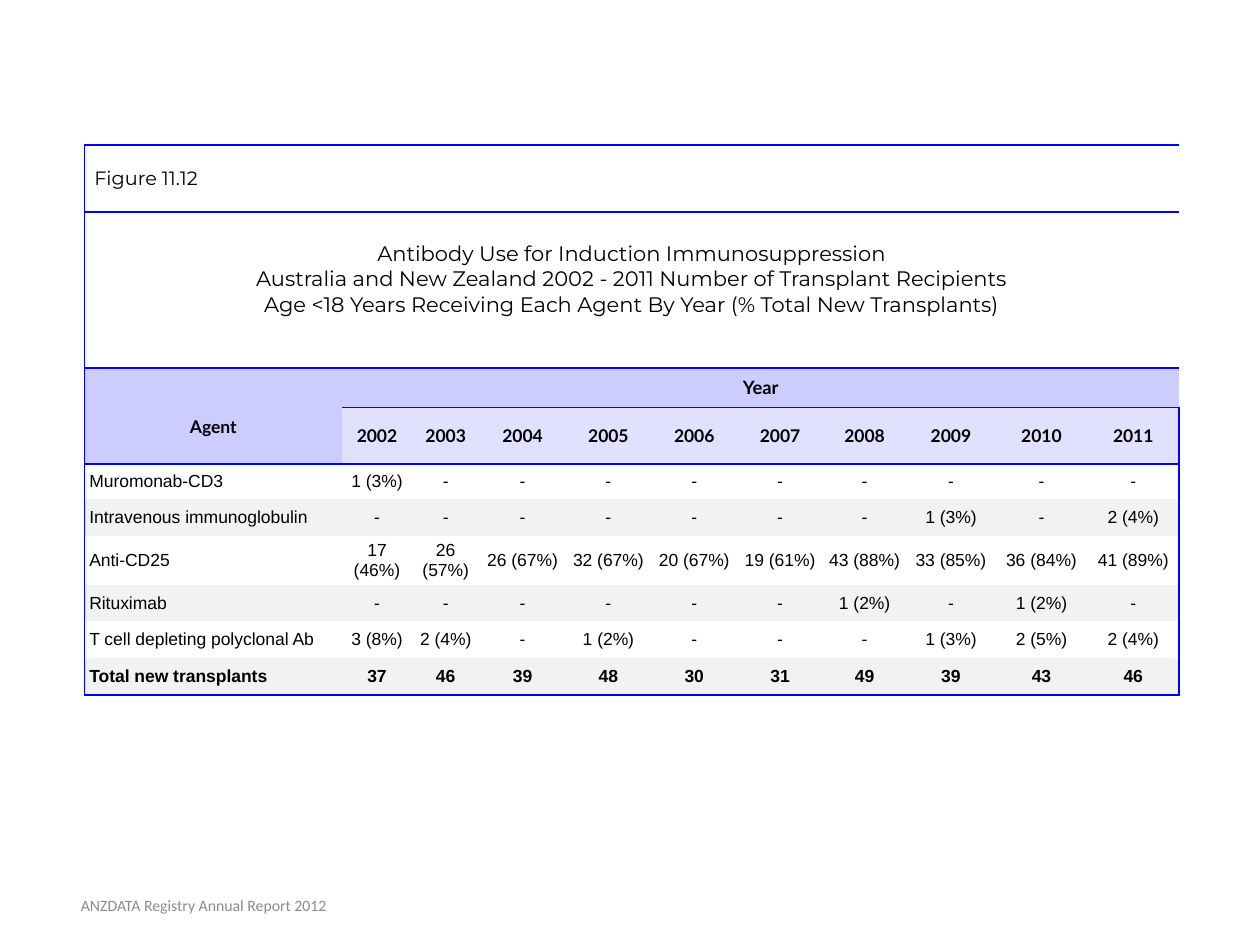
from dataclasses import dataclass

from lxml import etree
from pptx import Presentation
from pptx.dml.color import RGBColor
from pptx.enum.text import MSO_ANCHOR, PP_ALIGN
from pptx.oxml.ns import qn
from pptx.util import Cm, Pt


@dataclass(frozen=True)
class Theme:
    rule: str = "0000FF"
    text: str = "000000"
    footer: str = "8C8C8C"
    header: str = "CCCCFF"
    years: str = "E1E1FF"
    band: str = "F2F2F2"
    title_font: str = "Montserrat"
    header_font: str = "Lato"
    body_font: str = "Arial"
    footer_font: str = "Calibri"
    figure_size: float = 11
    title_size: float = 12
    year_size: float = 10.5
    body_size: float = 10
    footer_size: float = 9


THEME = Theme()
FIGURE = "Figure 11.12"
TITLE = """Antibody Use for Induction Immunosuppression
Australia and New Zealand 2002 - 2011 Number of Transplant Recipients
Age <18 Years Receiving Each Agent By Year (% Total New Transplants)"""
YEARS = [str(year) for year in range(2002, 2012)]
AGENTS = [
    ("Muromonab-CD3", ["1 (3%)"] + ["-"] * 9),
    ("Intravenous immunoglobulin", ["-"] * 7 + ["1 (3%)", "-", "2 (4%)"]),
    ("Anti-CD25", ["17 (46%)", "26 (57%)", "26 (67%)", "32 (67%)", "20 (67%)",
                   "19 (61%)", "43 (88%)", "33 (85%)", "36 (84%)", "41 (89%)"]),
    ("Rituximab", ["-"] * 6 + ["1 (2%)", "-", "1 (2%)", "-"]),
    ("T cell depleting polyclonal Ab", ["3 (8%)", "2 (4%)", "-", "1 (2%)", "-",
                                        "-", "-", "1 (3%)", "2 (5%)", "2 (4%)"]),
    ("Total new transplants", ["37", "46", "39", "48", "30",
                               "31", "49", "39", "43", "46"]),
]
COLUMN_WIDTHS = [5.2, 1.4, 1.37] + [1.73] * 4 + [1.68, 1.8, 1.85, 1.85]
ROW_HEIGHTS = [1.35, 3.15, 0.79, 1.14, 0.71] + [0.74] * 5
FIRST_AGENT_ROW = 4
RULED_ROWS = {0, 1, 2, 3, 4, len(ROW_HEIGHTS)}  # boundaries that carry a line


def style_text(frame, font, size, color, bold=False, align=PP_ALIGN.CENTER, after=None):
    for paragraph in frame.paragraphs:
        paragraph.alignment = align
        if after is not None:
            paragraph.space_after = Pt(after)
        for run in paragraph.runs:
            run.font.name = font
            run.font.size = Pt(size)
            run.font.bold = bold
            run.font.color.rgb = RGBColor.from_string(color)


def set_borders(cell, row, column):
    """Rule the outer frame and the marked row boundaries; clear the rest."""
    agent_header = column == 0
    ruled = {
        "a:lnL": column == 0,
        "a:lnR": column == len(COLUMN_WIDTHS) - 1,
        "a:lnT": row in RULED_ROWS and not (agent_header and row == 3),
        "a:lnB": row + 1 in RULED_ROWS and not (agent_header and row == 2),
    }
    properties = cell._tc.get_or_add_tcPr()
    for side, visible in ruled.items():
        line = etree.SubElement(properties, qn(side), w=str(Pt(1)))
        if visible:
            fill = etree.SubElement(line, qn("a:solidFill"))
            etree.SubElement(fill, qn("a:srgbClr"), val=THEME.rule)
        else:
            etree.SubElement(line, qn("a:noFill"))


def fill_cell(cell, color):
    if color:
        cell.fill.solid()
        cell.fill.fore_color.rgb = RGBColor.from_string(color)
    else:
        cell.fill.background()


def row_fill(row, column):
    if row == 2 or (row == 3 and column == 0):
        return THEME.header
    if row == 3:
        return THEME.years
    if row > FIRST_AGENT_ROW and (row - FIRST_AGENT_ROW) % 2:
        return THEME.band
    return None


def add_headings(table):
    last = len(COLUMN_WIDTHS) - 1
    figure, title = table.cell(0, 0), table.cell(1, 0)
    agent, year = table.cell(2, 0), table.cell(2, 1)
    figure.merge(table.cell(0, last))
    title.merge(table.cell(1, last))
    agent.merge(table.cell(3, 0))
    year.merge(table.cell(2, last))

    figure.text_frame.text = FIGURE
    style_text(figure.text_frame, THEME.title_font, THEME.figure_size,
               THEME.text, align=PP_ALIGN.LEFT)
    figure.margin_left = figure.margin_right = Cm(0.2)
    title.text_frame.text = TITLE
    style_text(title.text_frame, THEME.title_font, THEME.title_size, THEME.text)
    title.margin_bottom = Cm(0.53)
    agent.margin_top = Cm(0.53)

    labels = [(agent, "Agent", THEME.body_size), (year, "Year", THEME.year_size)]
    labels += [(table.cell(3, column), label, THEME.body_size)
               for column, label in enumerate(YEARS, 1)]
    for cell, label, size in labels:
        cell.text_frame.text = label
        style_text(cell.text_frame, THEME.header_font, size, THEME.text, bold=True)


def add_agent_rows(table):
    for row, (agent, counts) in enumerate(AGENTS, FIRST_AGENT_ROW):
        is_total = row == len(ROW_HEIGHTS) - 1
        for column, value in enumerate([agent] + counts):
            frame = table.cell(row, column).text_frame
            frame.text = value
            style_text(frame, THEME.body_font, THEME.body_size, THEME.text, is_total,
                       PP_ALIGN.CENTER if column else PP_ALIGN.LEFT, after=14)


def add_antibody_table(slide, left, top):
    table = slide.shapes.add_table(
        len(ROW_HEIGHTS), len(COLUMN_WIDTHS), Cm(left), Cm(top),
        Cm(sum(COLUMN_WIDTHS)), Cm(sum(ROW_HEIGHTS))).table
    table.first_row = table.horz_banding = False
    for column, width in zip(table.columns, COLUMN_WIDTHS):
        column.width = Cm(width)
    for row, height in zip(table.rows, ROW_HEIGHTS):
        row.height = Cm(height)
    for row in range(len(ROW_HEIGHTS)):
        for column in range(len(COLUMN_WIDTHS)):
            cell = table.cell(row, column)
            cell.vertical_anchor = MSO_ANCHOR.MIDDLE
            cell.margin_left = cell.margin_right = Cm(0.1)
            cell.margin_top = cell.margin_bottom = Cm(0.1)
            set_borders(cell, row, column)
            fill_cell(cell, row_fill(row, column))
    add_headings(table)
    add_agent_rows(table)


def add_footer(slide, left, top, width, height):
    frame = slide.shapes.add_textbox(Cm(left), Cm(top), Cm(width), Cm(height)).text_frame
    frame.word_wrap = True
    frame.vertical_anchor = MSO_ANCHOR.MIDDLE
    frame.text = "ANZDATA Registry Annual Report 2012"
    style_text(frame, THEME.footer_font, THEME.footer_size, THEME.footer)


def main():
    presentation = Presentation()
    presentation.slide_width, presentation.slide_height = Cm(25.4), Cm(19.05)
    slide = presentation.slides.add_slide(presentation.slide_layouts[6])
    add_antibody_table(slide, 1.7, 2.92)
    add_footer(slide, 0.08, 17.73, 8.05, 1.02)
    presentation.save("out.pptx")


if __name__ == "__main__":
    main()
